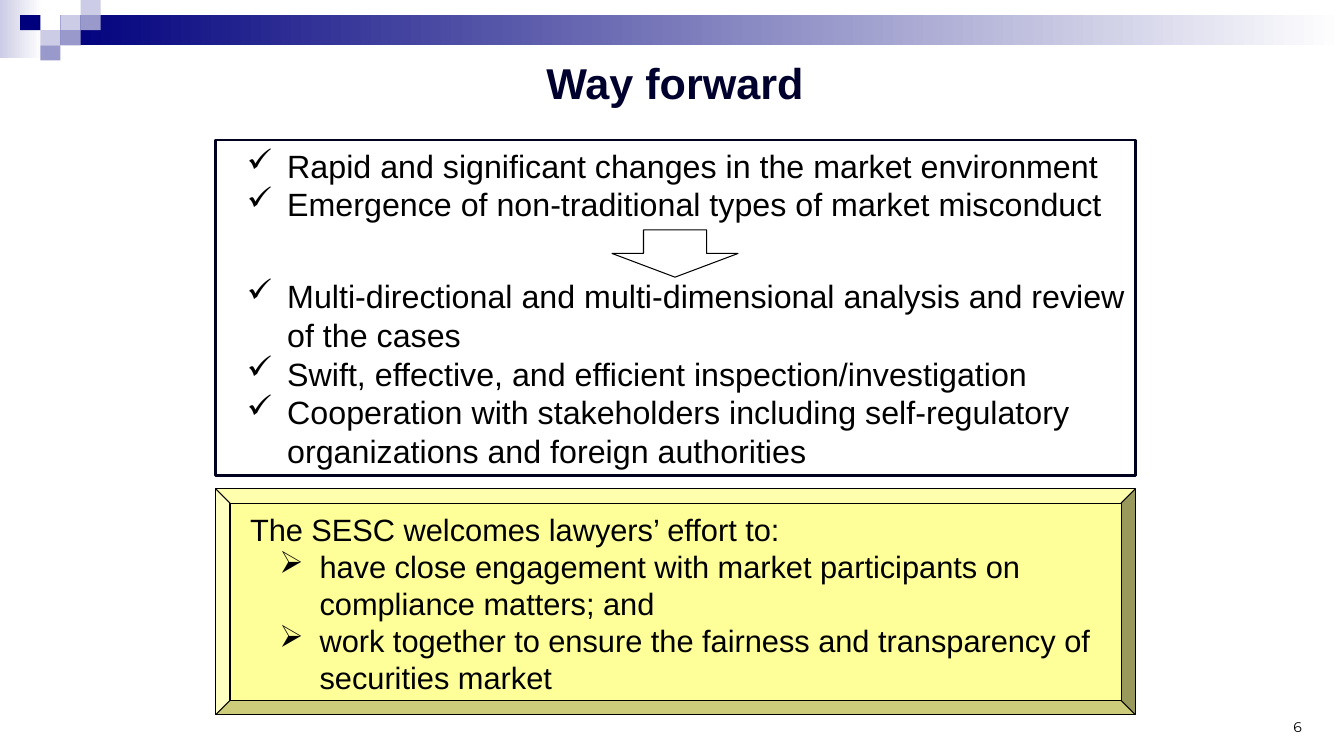
import pptx
import pptx.util
import pptx.dml.color
import pptx.enum.shapes
import pptx.enum.text
import pptx.oxml.ns
from lxml import etree

Inches = pptx.util.Inches
Pt = pptx.util.Pt
RGBColor = pptx.dml.color.RGBColor
SHAPE = pptx.enum.shapes.MSO_SHAPE
ALIGN = pptx.enum.text.PP_ALIGN
ANCHOR = pptx.enum.text.MSO_ANCHOR

NAVY = RGBColor(0x00, 0x00, 0x7D)
PALE = RGBColor(0xCC, 0xCC, 0xE6)
MID = RGBColor(0x99, 0x99, 0xCC)
WHITE = RGBColor(0xFF, 0xFF, 0xFF)
BLACK = RGBColor(0x00, 0x00, 0x00)
TITLE = RGBColor(0x00, 0x00, 0x2E)
FRAME = RGBColor(0x00, 0x00, 0x1F)
YELLOW = RGBColor(0xFF, 0xFF, 0x99)

TILES = [
    (0.6, 0.15, PALE), (0.8, 0, PALE), (0.8, 0.15, MID), (0.4, 0.3, PALE),
    (0.2, 0.15, NAVY), (0.6, 0.3, MID), (0.4, 0.45, MID),
]
TRENDS = [
    "Rapid and significant changes in the market environment",
    "Emergence of non-traditional types of market misconduct",
]
RESPONSES = [
    "Multi-directional and multi-dimensional analysis and review of the cases",
    "Swift, effective, and efficient inspection/investigation",
    "Cooperation with stakeholders including self-regulatory "
    "organizations and foreign authorities",
]
REQUESTS = [
    "have close engagement with market participants on compliance matters; and",
    "work together to ensure the fairness and transparency of securities market",
]


def set_all(target, values):
    for name, value in values.items():
        setattr(target, name, value)


def add_block(slide, kind, box, fill=None, line=None, width=0.75):
    s = slide.shapes.add_shape(kind, *map(Inches, box))
    s.shadow.inherit = False
    if fill is None:
        s.fill.background()
    else:
        s.fill.solid()
        s.fill.fore_color.rgb = fill
    if line is None:
        s.line.fill.background()
    else:
        s.line.color.rgb = line
        s.line.width = Pt(width)
    return s


def add_fade(slide, box, start):
    s = add_block(slide, SHAPE.RECTANGLE, box)
    s.fill.gradient()
    s.fill.gradient_angle = 0
    for stop, color, position in zip(s.fill.gradient_stops, (start, WHITE), (0, 1)):
        stop.color.rgb = color
        stop.position = position


def set_frame(tf, anchor, left=0.1, top=0.05, right=0.1, bottom=0.05):
    set_all(tf, {
        "word_wrap": True, "vertical_anchor": anchor,
        "margin_left": Inches(left), "margin_top": Inches(top),
        "margin_right": Inches(right), "margin_bottom": Inches(bottom),
    })


def add_line(tf, text, font, align=ALIGN.LEFT, margin=0, bullet=None, **spacing):
    p = tf.paragraphs[0] if not tf.text else tf.add_paragraph()
    p.alignment = align
    set_all(p, spacing)
    pPr = p._p.get_or_add_pPr()
    pPr.set("marL", str(Inches(margin)))
    pPr.set("indent", str(Inches(-0.4 if bullet else 0)))
    if bullet:
        bu = etree.SubElement(pPr, pptx.oxml.ns.qn("a:buChar"))
        bu.set("char", bullet)
    r = p.add_run()
    r.text = text
    color = font.get("color", BLACK)
    set_all(r.font, {
        "name": font.get("name", "Arial"), "size": Pt(font["size"]),
        "bold": font.get("bold", False),
    })
    r.font.color.rgb = color


def add_label(slide, box, text, font, align, anchor, **margins):
    s = slide.shapes.add_textbox(*map(Inches, box))
    set_frame(s.text_frame, anchor, **margins)
    add_line(s.text_frame, text, font, align)


def add_banner(slide):
    add_fade(slide, (0, 0, 0.42, 0.58), PALE)
    add_fade(slide, (0.6, 0.15, 12.73, 0.3), NAVY)
    for left, top, color in TILES:
        add_block(slide, SHAPE.RECTANGLE, (left, top, 0.2, 0.15), color)


def add_outlook(slide):
    s = add_block(slide, SHAPE.RECTANGLE, (2.14, 1.39, 9.12, 3.33), WHITE, FRAME, 2)
    tf = s.text_frame
    set_frame(tf, ANCHOR.MIDDLE, right=0.08)
    for text in TRENDS + RESPONSES:
        gap = Pt(38 if text == TRENDS[-1] else 0)
        add_line(tf, text, {"size": 23}, margin=0.61, bullet="✓", space_after=gap)
    add_block(slide, SHAPE.DOWN_ARROW, (6.07, 2.28, 1.25, 0.47), line=BLACK)


def add_appeal(slide):
    s = add_block(slide, SHAPE.BEVEL, (2.14, 4.85, 9.12, 2.24), YELLOW, BLACK)
    s.adjustments[0] = 0.063
    tf = s.text_frame
    set_frame(tf, ANCHOR.BOTTOM)
    add_line(tf, "The SESC welcomes lawyers’ effort to:", {"size": 22}, margin=0.1)
    for text in REQUESTS:
        add_line(tf, text, {"size": 22}, margin=0.79, bullet="➢")


def main():
    prs = pptx.Presentation()
    set_all(prs, {"slide_width": Inches(13.33), "slide_height": Inches(7.5)})
    slide = prs.slides.add_slide(prs.slide_layouts[6])
    add_banner(slide)
    add_label(slide, (10.68, 6.84, 2.33, 0.5), "6",
              {"size": 10, "name": "Montserrat"}, ALIGN.RIGHT, ANCHOR.BOTTOM)
    add_label(slide, (3.34, 0.56, 6.71, 0.54), "Way forward",
              {"size": 30.8, "bold": True, "color": TITLE}, ALIGN.CENTER,
              ANCHOR.TOP, left=0, top=0, right=0, bottom=0)
    add_outlook(slide)
    add_appeal(slide)
    prs.save("out.pptx")


if __name__ == "__main__":
    main()
